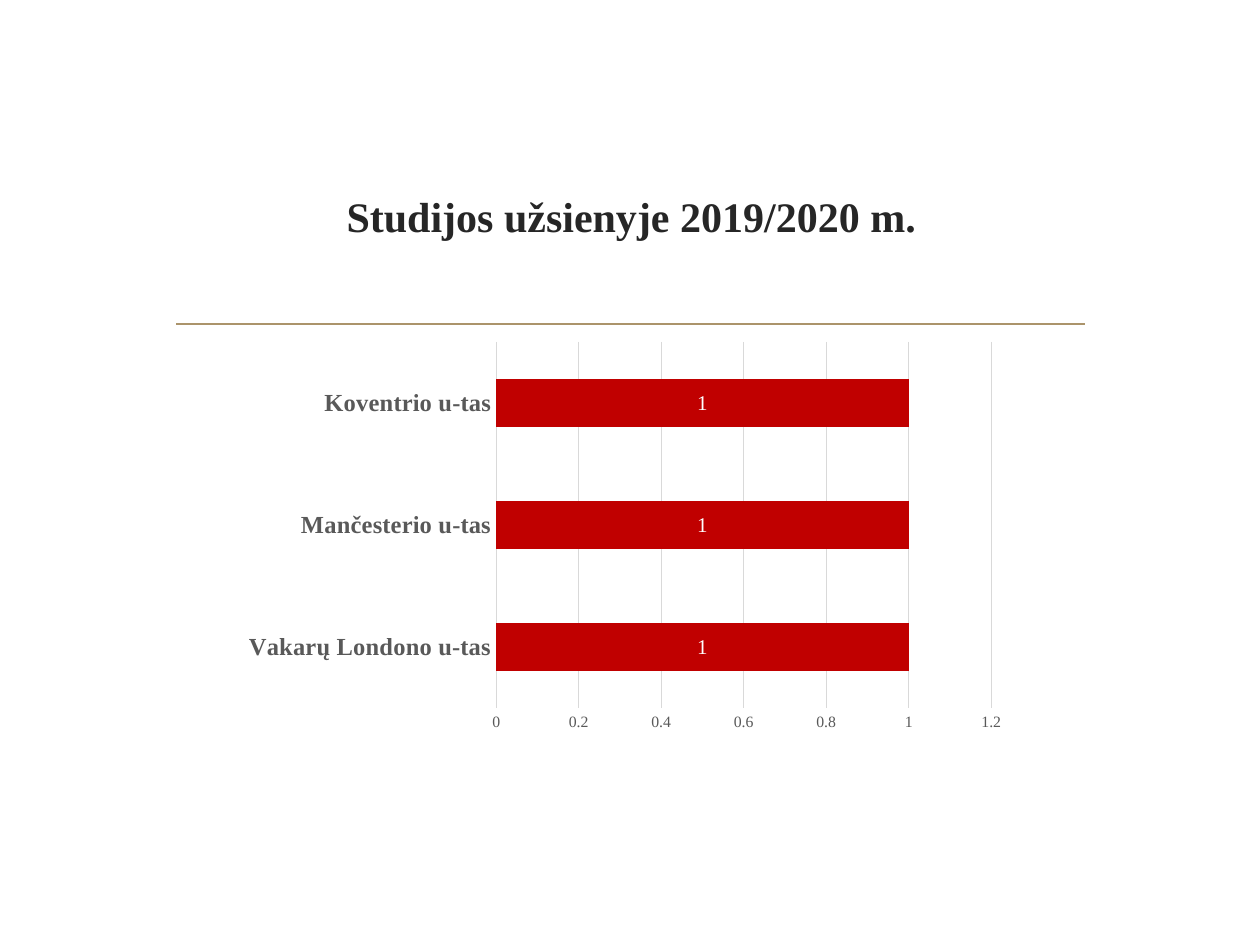
from lxml import etree
from pptx import Presentation
from pptx.chart.data import CategoryChartData
from pptx.dml.color import RGBColor
from pptx.enum.chart import XL_CHART_TYPE, XL_LABEL_POSITION, XL_TICK_MARK
from pptx.enum.shapes import MSO_CONNECTOR
from pptx.enum.text import MSO_ANCHOR, PP_ALIGN
from pptx.oxml.ns import qn
from pptx.util import Inches, Pt

BAR = XL_CHART_TYPE.BAR_CLUSTERED
LABEL_CENTER = XL_LABEL_POSITION.CENTER
NO_TICK = XL_TICK_MARK.NONE
STRAIGHT = MSO_CONNECTOR.STRAIGHT
MIDDLE = MSO_ANCHOR.MIDDLE
CENTER = PP_ALIGN.CENTER

FONT = "Times New Roman"
COLORS = {
    "title": "262626",
    "rule": "AB946B",
    "bar": "C00000",
    "label": "FFFFFF",
    "axis": "595959",
    "grid": "D9D9D9",
    "chart": "000000",
}


class SlideBuilder:
    def __init__(self, page):
        self.page = page

    def color(self, name):
        return RGBColor.from_string(COLORS[name])

    def style(self, font, size, color, bold=False):
        font.name = FONT
        font.size = Pt(size)
        font.bold = bold
        font.color.rgb = self.color(color)

    def rule(self, left, right, top):
        line = self.page.shapes.add_connector(
            STRAIGHT, Inches(left), Inches(top), Inches(right), Inches(top)
        )
        line.line.color.rgb = self.color("rule")
        line.line.width = Pt(1.25)
        etree.SubElement(line._element.spPr, qn("a:effectLst"))

    def title(self, text, left, top, width, height):
        box = self.page.shapes.add_textbox(
            Inches(left), Inches(top), Inches(width), Inches(height)
        )
        frame = box.text_frame
        frame.word_wrap = True
        frame.vertical_anchor = MIDDLE
        para = frame.paragraphs[0]
        para.alignment = CENTER
        span = para.add_run()
        span.text = text
        self.style(span.font, 24, "title", bold=True)

    def axis(self, axis, size, bold=False):
        axis.major_tick_mark = NO_TICK
        axis.minor_tick_mark = NO_TICK
        axis.format.line.fill.background()
        self.style(axis.tick_labels.font, size, "axis", bold)

    def bar_chart(self, categories, values, left, top, width, height):
        data = CategoryChartData()
        data.categories = categories
        data.add_series("Series 1", values)
        chart = self.page.shapes.add_chart(
            BAR, Inches(left), Inches(top), Inches(width), Inches(height), data
        ).chart
        chart.has_legend = False
        chart.has_title = False
        self.style(chart.font, 10, "chart")

        self.axis(chart.category_axis, 14, bold=True)
        chart.category_axis.has_major_gridlines = False
        value_axis = chart.value_axis
        self.axis(value_axis, 9)
        value_axis.minimum_scale = 0
        value_axis.maximum_scale = 1.2
        value_axis.major_unit = 0.2
        value_axis.has_major_gridlines = True
        grid = value_axis.major_gridlines.format.line
        grid.color.rgb = self.color("grid")
        grid.width = Pt(0.75)

        plot = chart.plots[0]
        plot.gap_width = 150
        plot.vary_by_categories = False
        series = plot.series[0]
        series.format.fill.solid()
        series.format.fill.fore_color.rgb = self.color("bar")
        labels = series.data_labels
        labels.show_value = True
        labels.position = LABEL_CENTER
        self.style(labels.font, 12, "label")


def main():
    deck = Presentation()
    deck.slide_width = Inches(10)
    deck.slide_height = Inches(7.5)
    builder = SlideBuilder(deck.slides.add_slide(deck.slide_layouts[6]))
    builder.rule(1.4, 8.61, 2.57)
    builder.title("Studijos užsienyje 2019/2020 m.", 1.29, 1, 7.44, 1.43)
    builder.bar_chart(
        ["Vakarų Londono u-tas", "Mančesterio u-tas", "Koventrio u-tas"],
        [1, 1, 1],
        1.85, 2.65, 6.22, 3.22,
    )
    deck.save("out.pptx")


if __name__ == "__main__":
    main()
